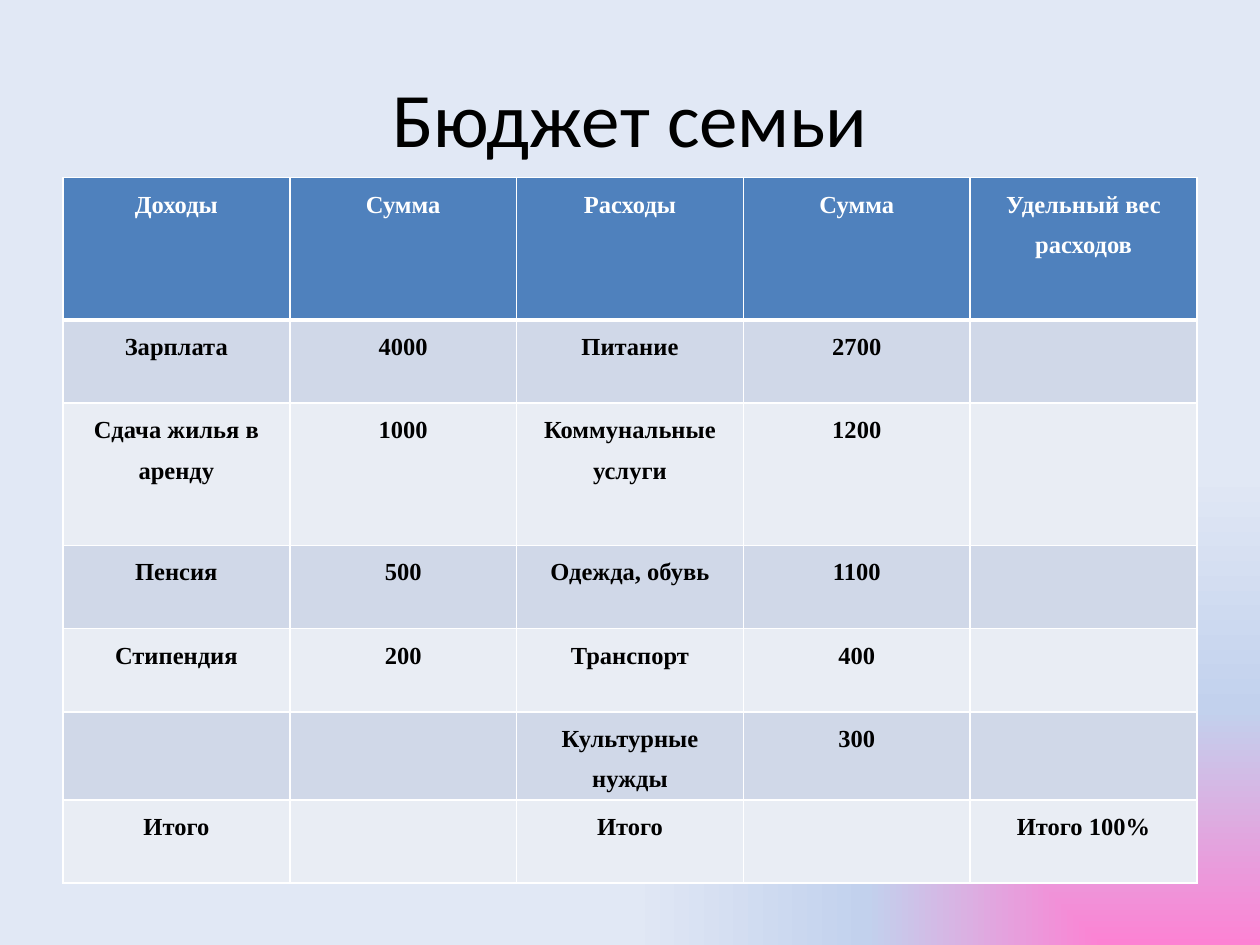
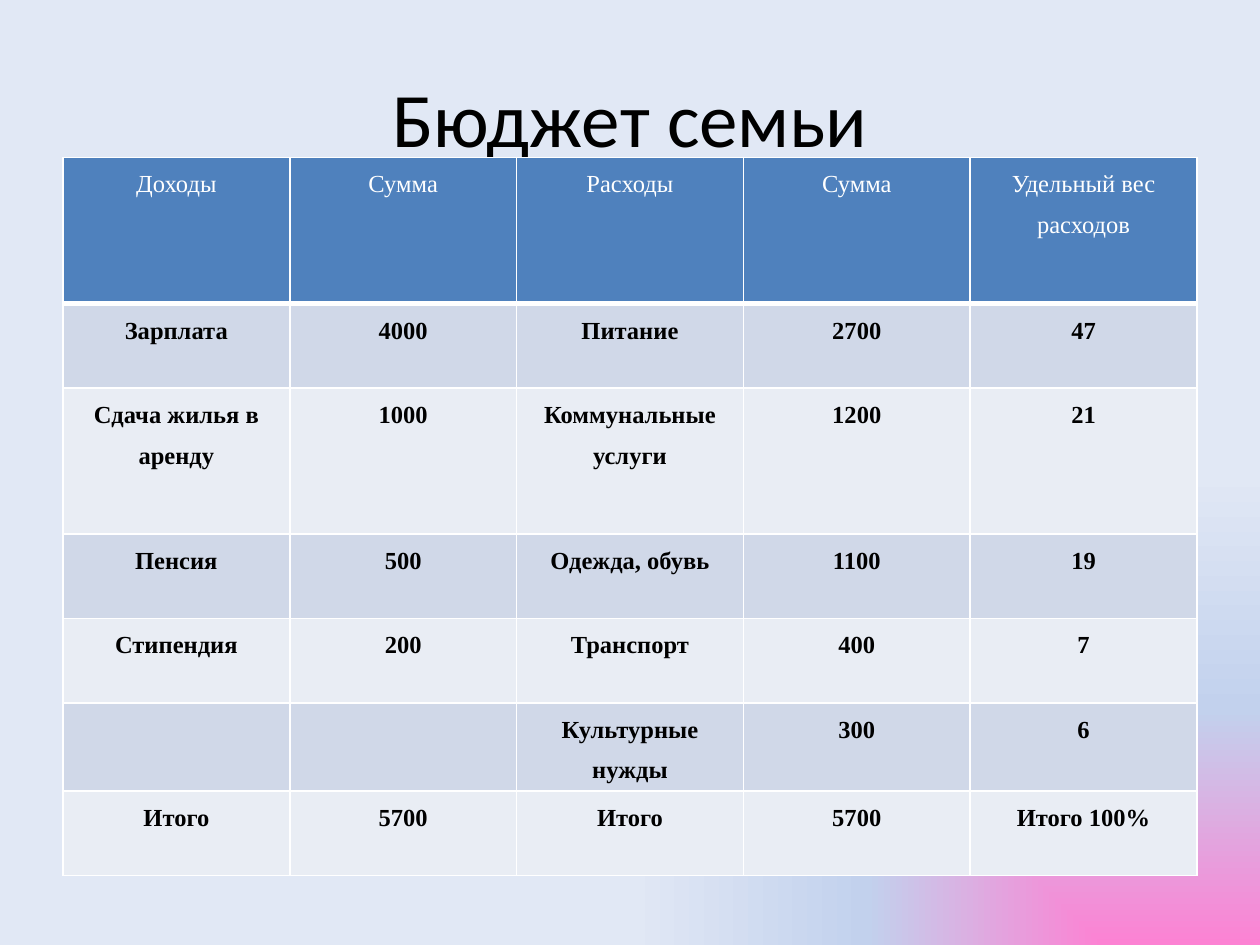
from pptx import Presentation
from pptx.dml.color import RGBColor
from pptx.enum.text import MSO_ANCHOR, PP_ALIGN
from pptx.oxml import parse_xml
from pptx.oxml.ns import nsdecls, qn
from pptx.util import Inches, Pt

CENTER = PP_ALIGN.CENTER
MIDDLE = MSO_ANCHOR.MIDDLE
BLANK_LAYOUT = 6

COLORS = {
    "glow": "FC82D3",
    "sky": "C2D1ED",
    "pale": "E1E8F5",
    "header": "4F81BD",
    "odd_row": "D0D8E8",
    "even_row": "E9EDF4",
    "white": "FFFFFF",
    "black": "000000",
}
TITLE_FONT = "Calibri"
TABLE_FONT = "Times New Roman"

LEFT, WIDTH = 0.5, 9
TALL_ROWS = (0, 2)

HEADER = ["Доходы", "Сумма", "Расходы", "Сумма", "Удельный вес расходов"]
BUDGET = [
    ["Зарплата", "4000", "Питание", "2700"],
    ["Сдача жилья в аренду", "1000", "Коммунальные услуги", "1200"],
    ["Пенсия", "500", "Одежда, обувь", "1100"],
    ["Стипендия", "200", "Транспорт", "400"],
    ["", "", "Культурные нужды", "300"],
]
EXPENSE_SHARES = ["47", "21", "19", "7", "6"]


def set_background(slide):
    stops = "".join(
        f'<a:gs pos="{position}"><a:srgbClr val="{COLORS[name]}"/></a:gs>'
        for position, name in ((0, "glow"), (50000, "sky"), (100000, "pale"))
    )
    background = parse_xml(
        f'<p:bg {nsdecls("p", "a")}><p:bgPr><a:gradFill rotWithShape="1">'
        f'<a:gsLst>{stops}</a:gsLst><a:path path="rect">'
        '<a:fillToRect l="100000" t="100000"/></a:path></a:gradFill>'
        "<a:effectLst/></p:bgPr></p:bg>"
    )
    slide.element.find(qn("p:cSld")).insert(0, background)


def style_paragraph(paragraph, font_name, size, color, bold=False):
    paragraph.alignment = CENTER
    font = paragraph.font
    font.name = font_name
    font.size = Pt(size)
    font.bold = bold
    font.color.rgb = RGBColor.from_string(COLORS[color])


def add_title(slide, text):
    box = slide.shapes.add_textbox(Inches(LEFT), Inches(0.3), Inches(WIDTH), Inches(1.25))
    frame = box.text_frame
    frame.word_wrap = True
    frame.vertical_anchor = MIDDLE
    frame.text = text
    style_paragraph(frame.paragraphs[0], TITLE_FONT, 44, "black")


def set_borders(cell, top=1, bottom=1):
    properties = cell._tc.get_or_add_tcPr()
    for side, width in (("L", 1), ("R", 1), ("T", top), ("B", bottom)):
        properties.append(parse_xml(
            f'<a:ln{side} {nsdecls("a")} w="{Pt(width)}"><a:solidFill>'
            f'<a:srgbClr val="{COLORS["white"]}"/></a:solidFill></a:ln{side}>'
        ))


def fill_cell(cell, text, fill, color, bold):
    cell.margin_left = cell.margin_right = Inches(0.07)
    cell.margin_top = cell.margin_bottom = 0
    cell.fill.solid()
    cell.fill.fore_color.rgb = RGBColor.from_string(COLORS[fill])
    cell.text = text
    paragraph = cell.text_frame.paragraphs[0]
    paragraph.line_spacing = 1.5
    style_paragraph(paragraph, TABLE_FONT, 14, color, bold)


def add_budget_table(slide, rows, top, tall, short, bold_header):
    heights = [tall if index in TALL_ROWS else short for index in range(len(rows))]
    table = slide.shapes.add_table(
        len(rows), len(HEADER), Inches(LEFT), Inches(top), Inches(WIDTH), Inches(sum(heights))
    ).table
    for row_index, (values, height) in enumerate(zip(rows, heights)):
        table.rows[row_index].height = Inches(height)
        is_header = row_index == 0
        band = "odd_row" if row_index % 2 else "even_row"
        for column_index, text in enumerate(values):
            cell = table.cell(row_index, column_index)
            set_borders(cell, top=3 if row_index == 1 else 1, bottom=3 if is_header else 1)
            if is_header:
                fill_cell(cell, text, "header", "white", bold_header)
            else:
                fill_cell(cell, text, band, "black", True)


def add_budget_slide(deck, shares, total, top, tall, short, bold_header):
    slide = deck.slides.add_slide(deck.slide_layouts[BLANK_LAYOUT])
    set_background(slide)
    add_title(slide, "Бюджет семьи")
    body = [entry + [share] for entry, share in zip(BUDGET, shares)]
    totals = ["Итого", total, "Итого", total, "Итого 100%"]
    add_budget_table(slide, [HEADER, *body, totals], top, tall, short, bold_header)


def main():
    deck = Presentation()
    deck.slide_width, deck.slide_height = Inches(10), Inches(7.5)
    add_budget_slide(deck, [""] * len(BUDGET), "", 1.41, 1.13, 0.66, True)
    add_budget_slide(deck, EXPENSE_SHARES, "5700", 1.25, 1.16, 0.67, False)
    deck.save("out.pptx")


if __name__ == "__main__":
    main()
